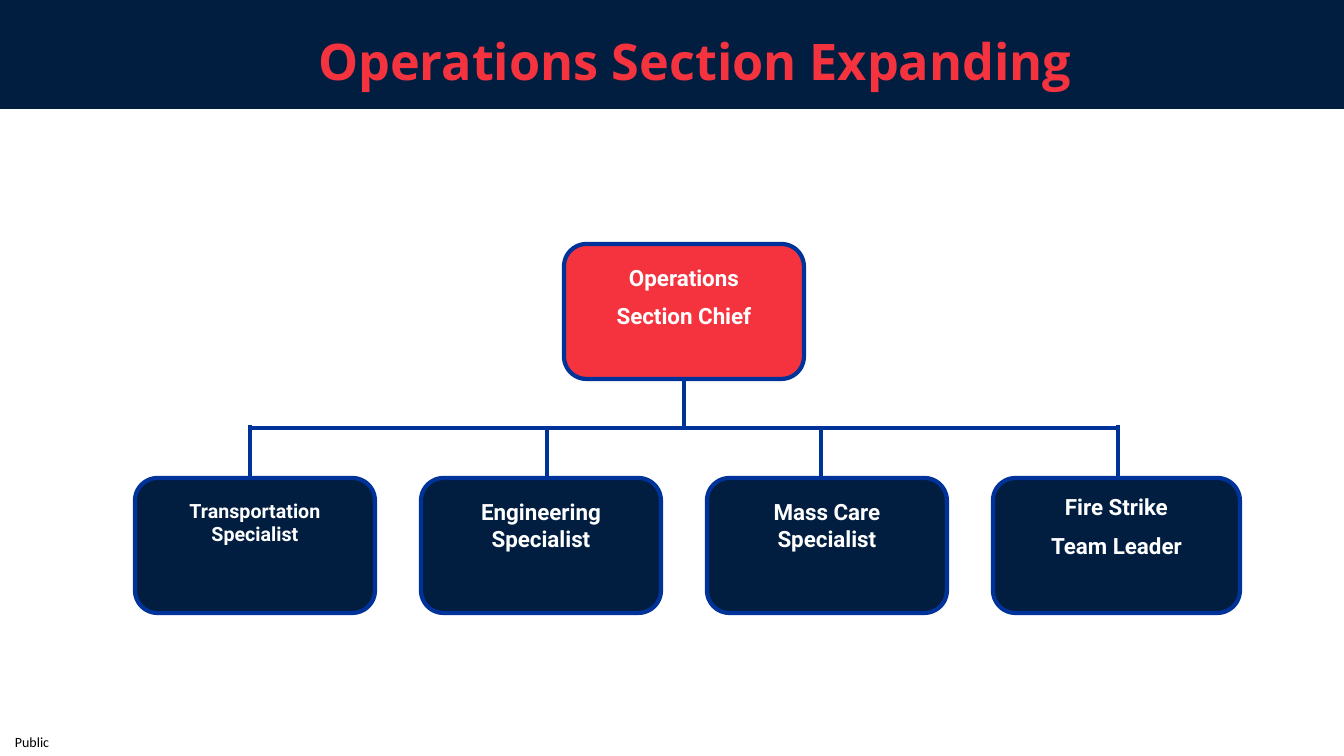
from pptx import Presentation
from pptx import util as u
from pptx.dml.color import RGBColor
from pptx.enum import shapes, text
from pptx.oxml.ns import qn
from lxml import etree

NAVY = RGBColor(0x01, 0x1E, 0x41)
RED = RGBColor(0xF5, 0x33, 0x3F)
BLUE = RGBColor(0x00, 0x33, 0x99)
WHITE = RGBColor(0xFF, 0xFF, 0xFF)
BLACK = RGBColor(0x00, 0x00, 0x00)

WIDE, HIGH = 1344, 756
BOX_W, BOX_H = 240, 135
ROW_X, ROW_Y, PITCH = 135, 478, 286
BAR_Y = 428

# lines of text, point size, top inset, box width, x of the drop line
TEAM = [
    (["Transportation Specialist"], 14, 14, BOX_W, 250),
    (["Engineering Specialist"], 16, 14, BOX_W, 547),
    (["Mass Care Specialist"], 16, 14, BOX_W, 821),
    (["Fire Strike", "Team Leader"], 16, 9, 247, 1118),
]


def px(n):
    return u.Emu(round(n * u.Inches(1) / 100.8))


def area(*sides):
    return [px(n) for n in sides]


def write(para, words, font, size, color, bold=True):
    run = para.add_run()
    run.text = words
    run.font.name = font
    run.font.size = u.Pt(size)
    run.font.bold = bold
    run.font.color.rgb = color


def add_band(slide):
    band = slide.shapes.add_shape(shapes.MSO_SHAPE.RECTANGLE, *area(0, 0, WIDE, 109))
    band.shadow.inherit = False
    band.fill.solid()
    band.fill.fore_color.rgb = NAVY
    band.line.fill.background()
    # The title placeholder must lie in front of the band.
    slide.shapes.title._element.addprevious(band._element)


def set_title(slide, words):
    title = slide.shapes.title
    title.left, title.top, title.width, title.height = area(47, 25, 1296, 70)
    frame = title.text_frame
    frame.auto_size = text.MSO_AUTO_SIZE.NONE
    frame.vertical_anchor = text.MSO_ANCHOR.MIDDLE
    para = frame.paragraphs[0]
    para.alignment = text.PP_ALIGN.CENTER
    write(para, words, "Open Sans", 36, RED)


def add_box(slide, x, y, width, fill, lines, size, inset):
    box = slide.shapes.add_shape(
        shapes.MSO_SHAPE.ROUNDED_RECTANGLE, *area(x, y, width, BOX_H))
    box.shadow.inherit = False
    box.fill.solid()
    box.fill.fore_color.rgb = fill
    box.line.color.rgb = BLUE
    box.line.width = u.Pt(3)
    frame = box.text_frame
    frame.word_wrap = True
    frame.vertical_anchor = text.MSO_ANCHOR.TOP
    frame.margin_left = frame.margin_right = px(20)
    frame.margin_top = px(inset)
    for i, words in enumerate(lines):
        para = frame.add_paragraph() if i else frame.paragraphs[0]
        para.alignment = text.PP_ALIGN.CENTER
        para.space_before = u.Pt(8 if i else 0)
        write(para, words, "Roboto", size, WHITE)
    return box


def add_line(slide, x1, y1, x2, y2):
    line = slide.shapes.add_connector(
        shapes.MSO_CONNECTOR.STRAIGHT, *area(x1, y1, x2, y2))
    line.line.color.rgb = BLUE
    line.line.width = u.Pt(3)
    etree.SubElement(line._element.spPr, qn("a:effectLst"))
    return line


def add_label(slide, words):
    label = slide.shapes.add_textbox(*area(15, 727, 50, 29))
    frame = label.text_frame
    frame.word_wrap = True
    frame.vertical_anchor = text.MSO_ANCHOR.MIDDLE
    frame.margin_left = frame.margin_right = 0
    frame.margin_top = frame.margin_bottom = 0
    write(frame.paragraphs[0], words, "Calibri", 10, BLACK, bold=False)


def main():
    deck = Presentation()
    deck.slide_width, deck.slide_height = px(WIDE), px(HIGH)
    slide = deck.slides.add_slide(deck.slide_layouts[5])
    add_band(slide)
    set_title(slide, "Operations Section Expanding")

    drops = [member[-1] for member in TEAM]
    for x in drops:
        top = BAR_Y - 3 if x in (drops[0], drops[-1]) else BAR_Y
        add_line(slide, x, top, x, ROW_Y)
    add_line(slide, drops[0], BAR_Y, drops[-1], BAR_Y)

    chief = add_box(slide, 564, 244, BOX_W, RED,
                    ["Operations", "Section Chief"], 16, 14)
    stem = add_line(slide, 684, 244 + BOX_H, 684, BAR_Y)
    stem.begin_connect(chief, 2)

    for i, (lines, size, inset, width, _) in enumerate(TEAM):
        add_box(slide, ROW_X + i * PITCH, ROW_Y, width, NAVY, lines, size, inset)
    add_label(slide, "Public")
    deck.save("out.pptx")


if __name__ == "__main__":
    main()
